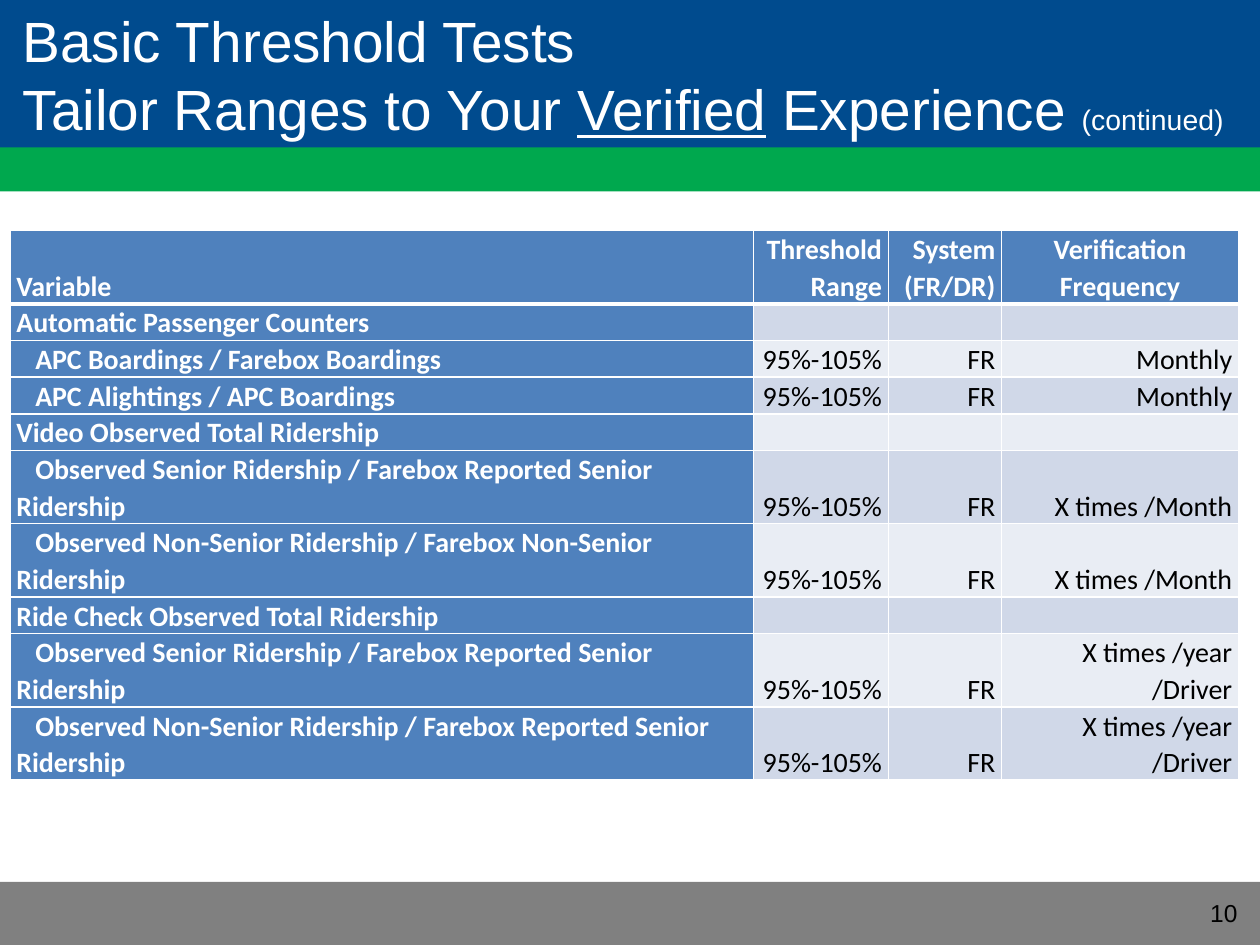
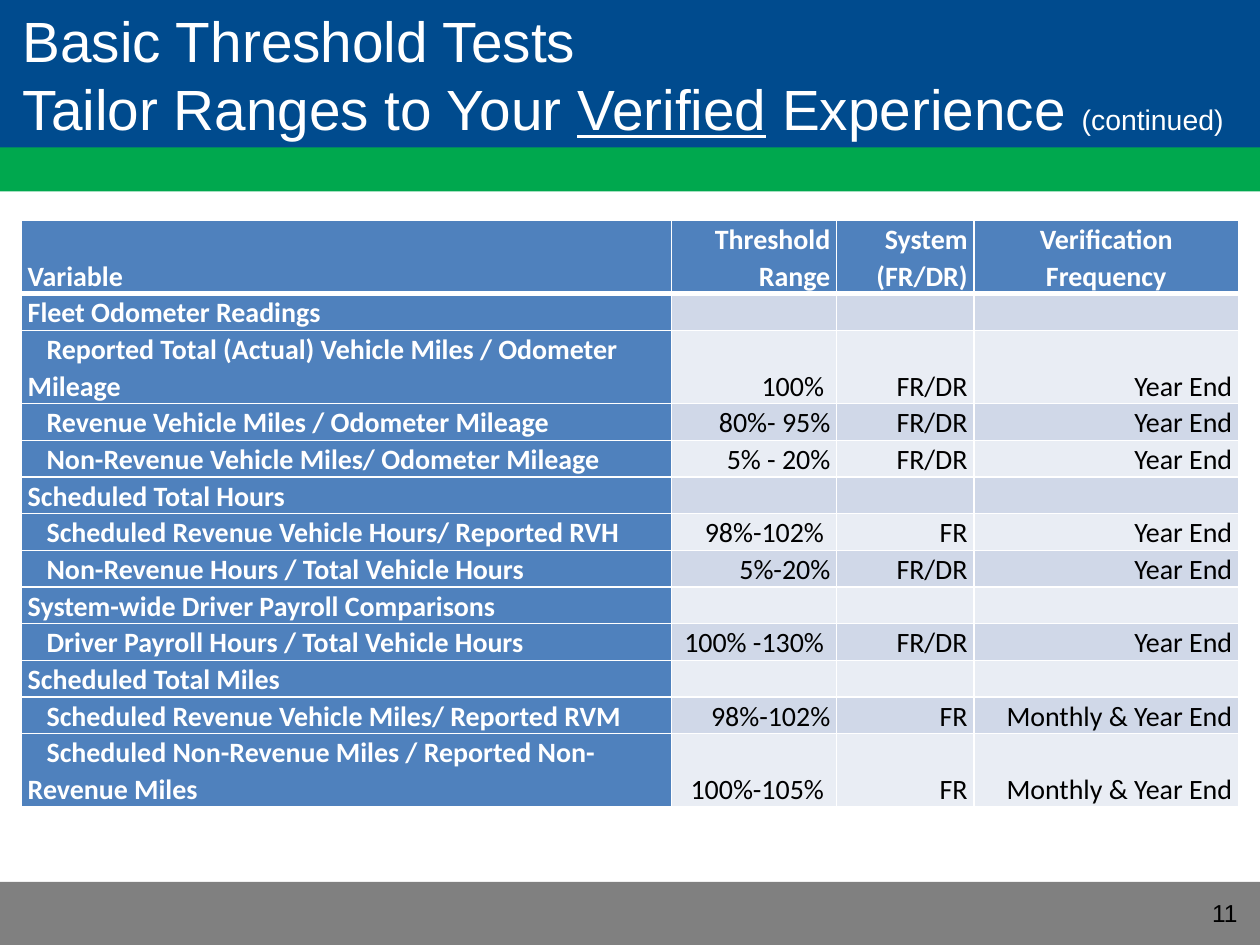
from lxml.etree import SubElement
from pptx import Presentation
from pptx.dml.color import RGBColor
from pptx.enum.shapes import MSO_SHAPE as Shape
from pptx.enum.text import MSO_ANCHOR as Anchor, MSO_AUTO_SIZE as AutoSize, PP_ALIGN as Align
from pptx.oxml.ns import qn
from pptx.util import Inches, Pt

WHITE, BLACK = "FFFFFF", "000000"
NAVY, GREEN, GRAY = "004B8E", "00A84E", "808080"
LABEL_BLUE = "4F81BD"
ROW_TINTS = ("D0D8E8", "E9EDF4")
BANDS = ((0, 1.25, NAVY), (1.17, 0.35, GREEN), (7, 0.5, GRAY))

HEADINGS = ("Variable", "Threshold Range", "System (FR/DR)", "Verification Frequency")
HEADING_ALIGNS = (Align.JUSTIFY, Align.RIGHT, Align.RIGHT, Align.CENTER)

RIDERSHIP_TESTS = (
    ("Automatic Passenger Counters",),
    ("APC Boardings / Farebox Boardings", "95%-105%", "FR", "Monthly"),
    ("APC Alightings / APC Boardings", "95%-105%", "FR", "Monthly"),
    ("Video Observed Total Ridership",),
    ("Observed Senior Ridership / Farebox Reported Senior Ridership",
     "95%-105%", "FR", "X times /Month"),
    ("Observed Non-Senior Ridership / Farebox Non-Senior Ridership",
     "95%-105%", "FR", "X times /Month"),
    ("Ride Check Observed Total Ridership",),
    ("Observed Senior Ridership / Farebox Reported Senior Ridership",
     "95%-105%", "FR", "X times /year /Driver"),
    ("Observed Non-Senior Ridership / Farebox Reported Senior Ridership",
     "95%-105%", "FR", "X times /year /Driver"),
)

MILES_AND_HOURS_TESTS = (
    ("Fleet Odometer Readings",),
    ("Reported Total (Actual) Vehicle Miles / Odometer Mileage", "100% ", "FR/DR", "Year End"),
    ("Revenue Vehicle Miles / Odometer Mileage", "80%- 95%", "FR/DR", "Year End"),
    ("Non-Revenue Vehicle Miles/ Odometer Mileage", " 5% - 20%", "FR/DR", "Year End"),
    ("Scheduled Total Hours",),
    ("Scheduled Revenue Vehicle Hours/ Reported RVH", "98%-102% ", "FR", "Year End"),
    ("Non-Revenue Hours / Total Vehicle Hours", "5%-20%", "FR/DR", "Year End"),
    ("System-wide Driver Payroll Comparisons",),
    ("Driver Payroll Hours / Total Vehicle Hours", "100% -130% ", "FR/DR", "Year End"),
    ("Scheduled Total Miles",),
    ("Scheduled Revenue Vehicle Miles/ Reported RVM", " 98%-102%", "FR", "Monthly & Year End"),
    ("Scheduled Non-Revenue Miles / Reported Non-Revenue Miles",
     "100%-105% ", "FR", "Monthly & Year End"),
)


def rgb(color):
    return RGBColor.from_string(color)


def add_run(paragraph, text, size, color, font="Arial", bold=False, underline=False):
    run = paragraph.add_run()
    run.text = text
    run.font.name = font
    run.font.size = Pt(size)
    run.font.bold = bold
    run.font.underline = underline
    run.font.color.rgb = rgb(color)


def add_band(slide, top, height, color):
    band = slide.shapes.add_shape(Shape.RECTANGLE, 0, Inches(top), Inches(10), Inches(height))
    band.shadow.inherit = False
    band.fill.solid()
    band.fill.fore_color.rgb = rgb(color)
    band.line.fill.background()


def add_page_number(slide, number):
    box = slide.shapes.add_textbox(Inches(9.42), Inches(7.08), Inches(0.5), Inches(0.34))
    box.text_frame.word_wrap = True
    paragraph = box.text_frame.paragraphs[0]
    paragraph.alignment = Align.RIGHT
    add_run(paragraph, str(number), 14, BLACK)


def format_title(slide):
    title = slide.shapes.title
    slide.shapes._spTree.append(title._element)
    title.left, title.top = Inches(0.08), Inches(0)
    title.width, title.height = Inches(9.75), Inches(1.17)
    frame = title.text_frame
    frame.word_wrap = True
    frame.auto_size = AutoSize.NONE
    frame.vertical_anchor = Anchor.MIDDLE
    frame.margin_right = 0
    paragraph = frame.paragraphs[0]
    paragraph.alignment = Align.LEFT
    add_run(paragraph, "Basic Threshold Tests", 32.4, WHITE)
    paragraph.add_line_break()
    add_run(paragraph, "Tailor Ranges to Your ", 32.4, WHITE)
    add_run(paragraph, "Verified", 32.4, WHITE, underline=True)
    add_run(paragraph, " Experience ", 32.4, WHITE)
    add_run(paragraph, "(continued)", 16.2, WHITE)


def add_borders(cell, bottom_width):
    properties = cell._tc.get_or_add_tcPr()
    for side, width in (("L", 1), ("R", 1), ("T", 1), ("B", bottom_width)):
        line = SubElement(properties, qn(f"a:ln{side}"), w=str(Pt(width)))
        fill = SubElement(line, qn("a:solidFill"))
        SubElement(fill, qn("a:srgbClr"), val=WHITE)


def fill_cell(cell, text, fill, color, align, bold=False, indent=0, bottom_width=1):
    add_borders(cell, bottom_width)
    cell.fill.solid()
    cell.fill.fore_color.rgb = rgb(fill)
    cell.vertical_anchor = Anchor.BOTTOM
    cell.margin_left = cell.margin_right = Inches(0.05)
    cell.margin_top = cell.margin_bottom = 0
    paragraph = cell.text_frame.paragraphs[0]
    if not text:
        SubElement(paragraph._p, qn("a:endParaRPr"), sz="1000")
        return
    paragraph.alignment = align
    paragraph.line_spacing = 1.07
    paragraph._p.get_or_add_pPr().set("indent", str(Inches(indent)))
    add_run(paragraph, text, 16, color, "Calibri", bold)


def add_threshold_table(slide, tests, left, top, height, column_widths, row_height):
    frame = slide.shapes.add_table(len(tests) + 1, len(HEADINGS), Inches(left), Inches(top),
                                   Inches(sum(column_widths)), Inches(height))
    table = frame.table
    for column, width in zip(table.columns, column_widths):
        column.width = Inches(width)
    for index, row in enumerate(table.rows):
        row.height = Inches(row_height if index else 0.39)
    frame.height = Inches(height)

    for column, (heading, align) in enumerate(zip(HEADINGS, HEADING_ALIGNS)):
        fill_cell(table.cell(0, column), heading, LABEL_BLUE, WHITE, align, True, bottom_width=3)
    for row, (variable, *limits) in enumerate(tests, 1):
        fill_cell(table.cell(row, 0), variable, LABEL_BLUE, WHITE, Align.LEFT, True,
                  indent=0.15 if limits else 0)
        for column, limit in enumerate(limits or [""] * 3, 1):
            fill_cell(table.cell(row, column), limit, ROW_TINTS[(row - 1) % 2],
                      BLACK, Align.RIGHT)


def add_threshold_slide(deck, number):
    slide = deck.slides.add_slide(deck.slide_layouts[5])
    for band in BANDS:
        add_band(slide, *band)
    add_page_number(slide, number)
    format_title(slide)
    return slide


def main():
    deck = Presentation()
    deck.slide_width, deck.slide_height = Inches(10), Inches(7.5)

    ridership = add_threshold_slide(deck, 10)
    add_threshold_table(ridership, RIDERSHIP_TESTS, 0.08, 1.83, 4.18,
                        (5.9, 1.07, 0.9, 1.88), 0.21)

    miles_and_hours = add_threshold_slide(deck, 11)
    add_threshold_table(miles_and_hours, MILES_AND_HOURS_TESTS, 0.17, 1.75, 4.44,
                        (5.16, 1.31, 1.09, 2.1), 0.22)

    deck.save("out.pptx")


if __name__ == "__main__":
    main()
